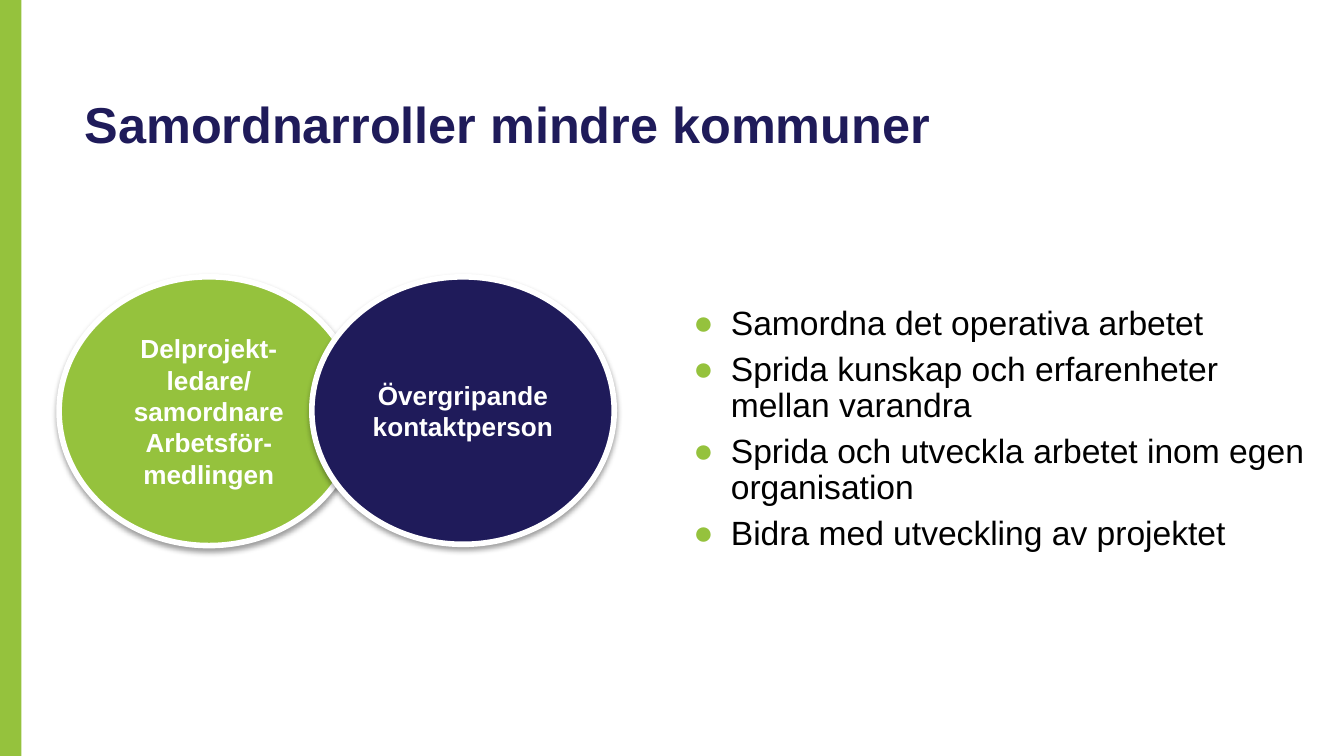
from lxml import etree
from pptx import Presentation
from pptx.dml.color import RGBColor
from pptx.enum import shapes, text
from pptx.oxml import ns
from pptx.util import Inches, Pt

COLORS = {"green": "95C23D", "navy": "1F1B5A", "white": "FFFFFF", "black": "000000"}
FONT = "Arial"
SLIDE_WIDTH = 10
SLIDE_HEIGHT = SLIDE_WIDTH * 9 / 16
DUTIES = [
    "Samordna det operativa arbetet",
    "Sprida kunskap och erfarenheter mellan varandra",
    "Sprida och utveckla arbetet inom egen organisation",
    "Bidra med utveckling av projektet",
]
ROLES = [
    ("Delprojekt-ledare/ samordnare Arbetsför-medlingen", "green", (0.44, 2.06, 2.23, 2)),
    ("Övergripande kontaktperson", "navy", (2.32, 2.06, 2.25, 1.99)),
]


def rgb(name):
    """Return the named palette colour."""
    return RGBColor.from_string(COLORS[name])


def add_child(parent, tag, **attributes):
    """Append a DrawingML element and return it."""
    return etree.SubElement(parent, ns.qn(tag), attributes)


def style(paragraph, size, color, bold=False):
    """Set the font of a whole paragraph."""
    font = paragraph.font
    font.name, font.size, font.bold = FONT, Pt(size), bold
    font.color.rgb = rgb(color)


def add_side_band(slide, box):
    """Draw the coloured band along the slide edge."""
    band = slide.shapes.add_shape(shapes.MSO_SHAPE.RECTANGLE, *map(Inches, box))
    band.shadow.inherit = False
    band.fill.solid()
    band.fill.fore_color.rgb = rgb("green")
    band.line.fill.background()


def add_title(slide, box, wording):
    """Place the heading at the bottom of its box."""
    frame = slide.shapes.add_textbox(*map(Inches, box)).text_frame
    frame.word_wrap = True
    frame.vertical_anchor = text.MSO_ANCHOR.BOTTOM
    frame.margin_left = frame.margin_right = frame.margin_top = frame.margin_bottom = 0
    heading = frame.paragraphs[0]
    heading.text = wording
    style(heading, 27, "navy", bold=True)


def add_duties(slide, box, duties):
    """List the duties with coloured bullets."""
    frame = slide.shapes.add_textbox(*map(Inches, box)).text_frame
    frame.word_wrap = True
    frame.auto_size = text.MSO_AUTO_SIZE.SHAPE_TO_FIT_TEXT
    for index, wording in enumerate(duties):
        duty = frame.add_paragraph() if index else frame.paragraphs[0]
        duty.text = wording
        duty.line_spacing = 0.9
        if index:
            duty.space_before = Pt(5.2)
        properties = duty._p.get_or_add_pPr()
        properties.set("marL", str(Inches(0.28)))
        properties.set("indent", str(-Inches(0.28)))
        bullet_color = add_child(properties, "a:buClr")
        add_child(bullet_color, "a:srgbClr", val=COLORS["green"])
        add_child(properties, "a:buFont", typeface=FONT)
        add_child(properties, "a:buChar", char="●")
        style(duty, 18, "black")


def add_role(slide, box, wording, color):
    """Draw one role as an outlined oval with a soft shadow."""
    role = slide.shapes.add_shape(shapes.MSO_SHAPE.OVAL, *map(Inches, box))
    role.fill.solid()
    role.fill.fore_color.rgb = rgb(color)
    role.line.color.rgb = rgb("white")
    role.line.width = Pt(3)
    role.shadow.inherit = False
    effects = role._element.spPr.find(ns.qn("a:effectLst"))
    shadow = add_child(effects, "a:outerShdw", blurRad=str(Pt(3.1)), dist=str(Pt(1.6)),
                       dir="5400000", rotWithShape="0")
    shade = add_child(shadow, "a:srgbClr", val=COLORS["black"])
    add_child(shade, "a:alpha", val="38000")
    frame = role.text_frame
    frame.word_wrap = True
    frame.vertical_anchor = text.MSO_ANCHOR.MIDDLE
    label = frame.paragraphs[0]
    label.text = wording
    label.alignment = text.PP_ALIGN.CENTER
    style(label, 14, "white", bold=True)


def main():
    """Build the slide and save it."""
    deck = Presentation()
    deck.slide_width, deck.slide_height = Inches(SLIDE_WIDTH), Inches(SLIDE_HEIGHT)
    slide = deck.slides.add_slide(deck.slide_layouts[6])
    add_side_band(slide, (0, 0, 0.16, SLIDE_HEIGHT))
    add_title(slide, (0.63, 0.4, 8.12, 0.74), "Samordnarroller mindre kommuner")
    add_duties(slide, (5.06, 2.23, 4.75, 1.95), DUTIES)
    for wording, color, box in ROLES:
        add_role(slide, box, wording, color)
    deck.save("out.pptx")


if __name__ == "__main__":
    main()
